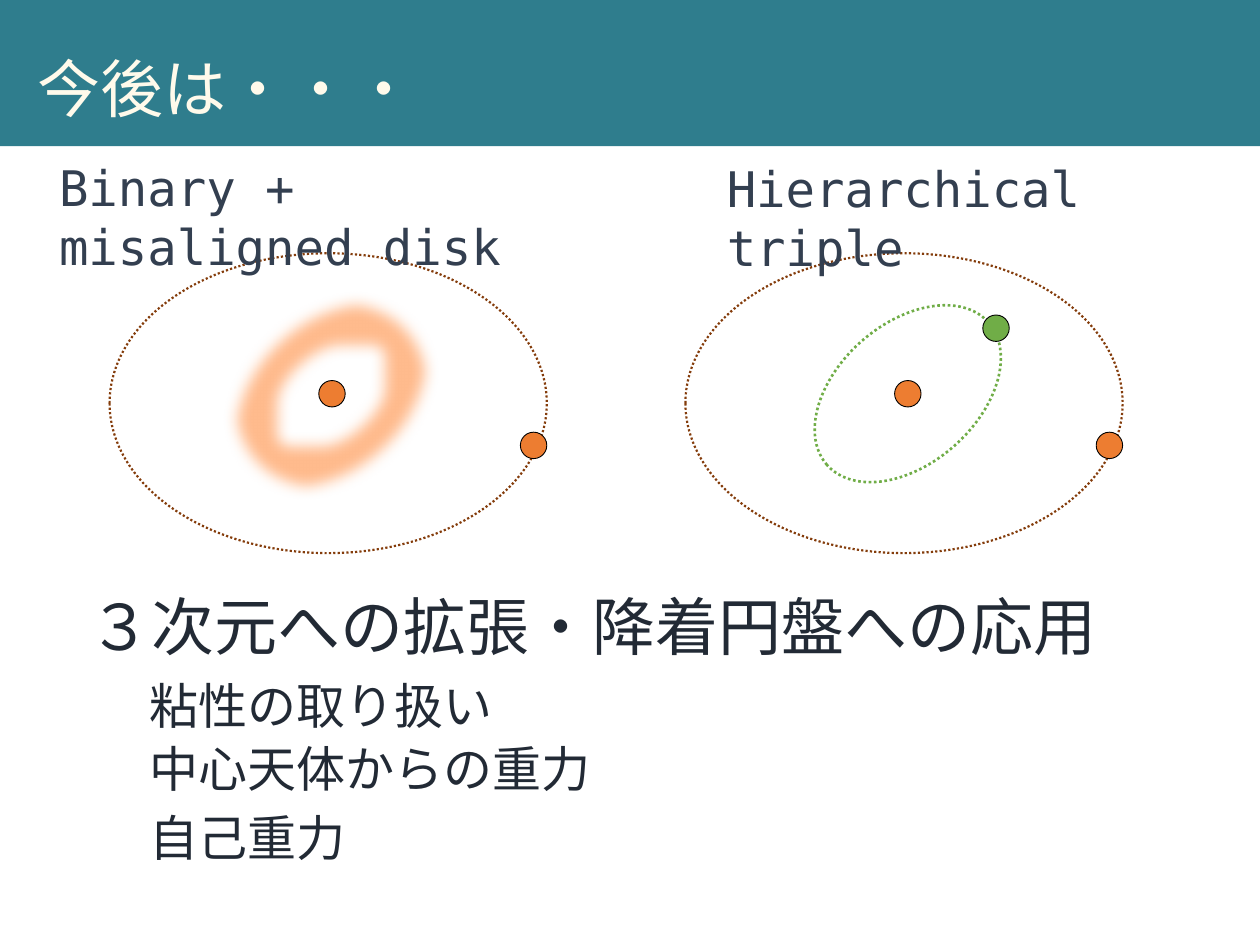
from dataclasses import dataclass
from typing import Optional

from lxml import etree
from pptx import Presentation
from pptx.dml.color import RGBColor
from pptx.enum.dml import MSO_LINE
from pptx.enum.shapes import MSO_SHAPE
from pptx.enum.text import MSO_ANCHOR, PP_ALIGN
from pptx.oxml.ns import qn
from pptx.util import Inches, Pt

RECTANGLE = MSO_SHAPE.RECTANGLE
OVAL = MSO_SHAPE.OVAL
DONUT = MSO_SHAPE.DONUT
DOTTED = MSO_LINE.ROUND_DOT
LEFT = PP_ALIGN.LEFT
TOP = MSO_ANCHOR.TOP

TEAL = RGBColor(0x2F, 0x7D, 0x8D)
CREAM = RGBColor(0xFF, 0xFA, 0xEB)
SLATE = RGBColor(0x33, 0x3F, 0x50)
INK = RGBColor(0x22, 0x2A, 0x35)
BROWN = RGBColor(0x84, 0x3C, 0x0B)
ORANGE = RGBColor(0xED, 0x7D, 0x31)
PEACH = RGBColor(0xFF, 0xBB, 0x8D)
GREEN = RGBColor(0x70, 0xAD, 0x47)
BLACK = RGBColor(0x00, 0x00, 0x00)

JAPANESE = "Noto Sans CJK JP"
MONO = "DejaVu Sans Mono"
SYSTEM_GAP = 4.57  # distance between the two orbital systems
TILT = 318.6


@dataclass
class Box:
    left: float
    top: float
    width: float
    height: float


@dataclass
class Label:
    text: str
    box: Box
    size: int
    font: str
    color: RGBColor


TITLE = Label("今後は・・・", Box(0.2, 0.34, 7.6, 0.71), 36, JAPANESE, CREAM)
LABELS = [
    Label("Binary + misaligned disk", Box(0.37, 1.2, 4.45, 0.57), 28, MONO, SLATE),
    Label("Hierarchical triple", Box(5.67, 1.21, 3.24, 0.57), 28, MONO, SLATE),
    Label("３次元への拡張・降着円盤への応用", Box(0.6, 4.61, 8.79, 0.71), 36, JAPANESE, INK),
] + [
    Label(text, Box(1.09, top, 8.79, 0.57), 28, JAPANESE, INK)
    for text, top in (("粘性の取り扱い", 5.31), ("中心天体からの重力", 5.81), ("自己重力", 6.36))
]


def write_label(shape, label: Label) -> None:
    """Place a text shape and fill it with one formatted run."""
    box = label.box
    shape.left, shape.top = Inches(box.left), Inches(box.top)
    shape.width, shape.height = Inches(box.width), Inches(box.height)
    frame = shape.text_frame
    frame.word_wrap = True
    frame.vertical_anchor = TOP
    paragraph = frame.paragraphs[0]
    paragraph.alignment = LEFT
    run = paragraph.add_run()
    run.text = label.text
    run.font.size = Pt(label.size)
    run.font.name = label.font
    run.font.color.rgb = label.color
    east_asian = etree.SubElement(run.font._element, qn("a:ea"))
    east_asian.set("typeface", label.font)


def add_figure(shapes, kind, box: Box, fill: Optional[RGBColor] = None,
               line: Optional[RGBColor] = None, weight: float = 0.5,
               dash=None, rotation: float = 0):
    """Add a preset shape with an optional fill and outline."""
    shape = shapes.add_shape(kind, Inches(box.left), Inches(box.top),
                             Inches(box.width), Inches(box.height))
    shape.shadow.inherit = False
    shape.rotation = rotation
    if fill is None:
        shape.fill.background()
    else:
        shape.fill.solid()
        shape.fill.fore_color.rgb = fill
    if line is None:
        shape.line.fill.background()
    else:
        shape.line.color.rgb = line
        shape.line.width = Pt(weight)
        if dash is not None:
            shape.line.dash_style = dash
    return shape


def add_body(shapes, left: float, top: float, color: RGBColor) -> None:
    """Add a star or companion."""
    add_figure(shapes, OVAL, Box(left, top, 0.21, 0.21), color, BLACK)


def add_disk(shapes) -> None:
    """Add the tilted disk with blurred edges."""
    disk = add_figure(shapes, DONUT, Box(1.68, 2.39, 1.9, 1.5), PEACH, rotation=TILT)
    disk.adjustments[0] = 0.38
    effects = disk._element.spPr.find(qn("a:effectLst"))
    soft_edge = etree.SubElement(effects, qn("a:softEdge"))
    soft_edge.set("rad", str(Inches(0.12)))


def add_system(slide, offset: float, has_disk: bool) -> None:
    """Add an outer orbit with its central star and outer companion."""
    shapes = slide.shapes.add_group_shape().shapes
    add_figure(shapes, OVAL, Box(0.87 + offset, 2.01, 3.47, 2.38),
               line=BROWN, weight=1.25, dash=DOTTED)
    if has_disk:
        add_disk(shapes)
    add_body(shapes, 4.13 + offset, 3.43, ORANGE)
    add_body(shapes, 2.53 + offset, 3.02, ORANGE)


def main() -> None:
    presentation = Presentation()
    presentation.slide_width = Inches(10)
    presentation.slide_height = Inches(7.5)
    slide = presentation.slides.add_slide(presentation.slide_layouts[5])

    # Title on its band
    title = slide.shapes.title
    write_label(title, TITLE)
    band = add_figure(slide.shapes, RECTANGLE, Box(-0.12, 0, 10.23, 1.16), TEAL)
    title._element.addprevious(band._element)

    # Orbital systems
    add_system(slide, 0, has_disk=True)
    add_system(slide, SYSTEM_GAP, has_disk=False)

    # Inner orbit and companion of the triple
    add_figure(slide.shapes, OVAL, Box(6.35, 2.57, 1.71, 1.11),
               line=GREEN, weight=1.5, dash=DOTTED, rotation=TILT)
    add_body(slide.shapes, 7.8, 2.5, GREEN)

    # Captions and outlook
    for label in LABELS:
        write_label(slide.shapes.add_textbox(0, 0, 0, 0), label)

    presentation.save("out.pptx")


if __name__ == "__main__":
    main()
